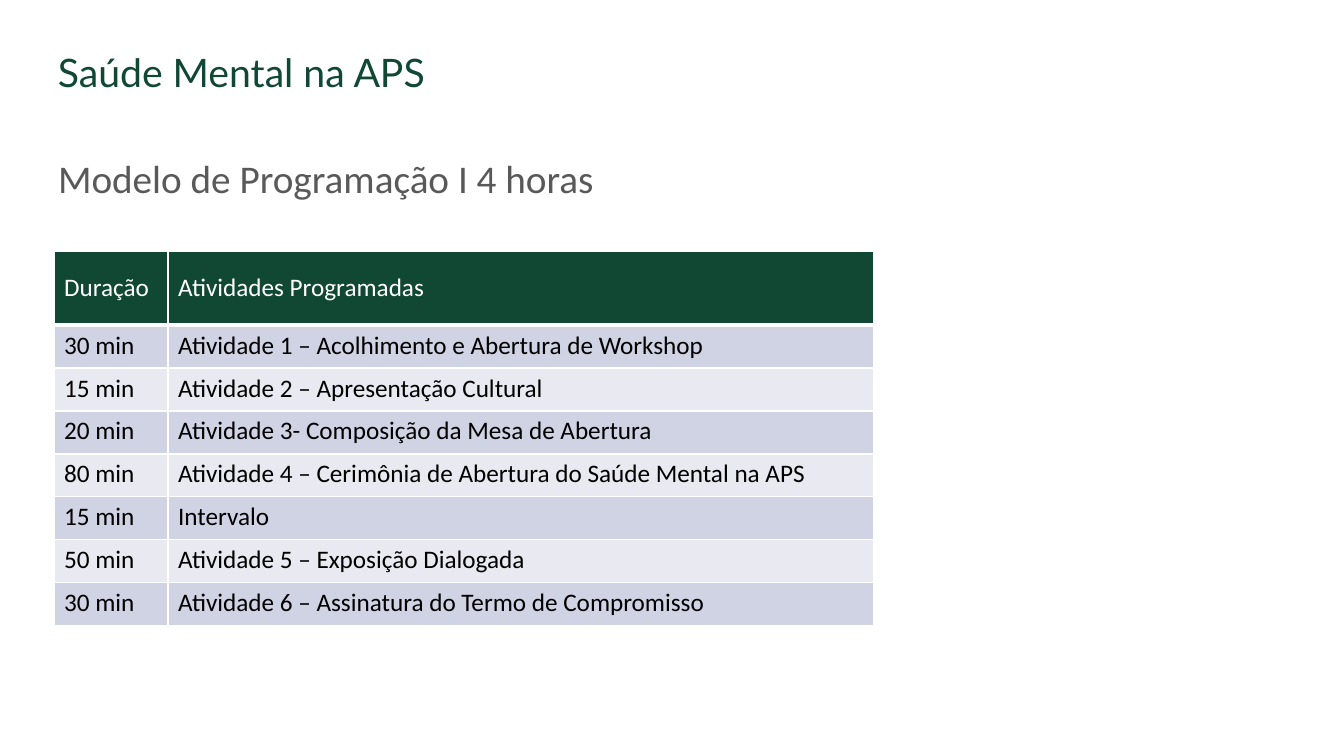
"""Build the four-hour programme slide of Saúde Mental na APS."""
from dataclasses import dataclass

from lxml import etree
from pptx import Presentation
from pptx import util as u
from pptx.dml.color import RGBColor
from pptx.enum import text
from pptx.oxml.ns import qn

EMU_PER_PX = 914400 / 100.8
COLOURS = {
    "green": "114834",
    "grey": "595959",
    "white": "FFFFFF",
    "black": "000000",
    "odd": "D0D3E3",
    "even": "E9EAF1",
}
COLUMN_WIDTHS = (114, 706)
HEADER_HEIGHT, ROW_HEIGHT = 74, 43


@dataclass(frozen=True)
class Style:
    size: int
    font: str
    colour: str


@dataclass(frozen=True)
class Activity:
    duration: str
    name: str


HEADER = Activity("Duração", "Atividades Programadas")
PROGRAMME = [
    Activity("30 min", "Atividade 1 – Acolhimento e Abertura de Workshop"),
    Activity("15 min", "Atividade 2 – Apresentação Cultural"),
    Activity("20 min", "Atividade 3- Composição da Mesa de Abertura"),
    Activity("80 min", "Atividade 4 – Cerimônia de Abertura do Saúde Mental na APS"),
    Activity("15 min", "Intervalo"),
    Activity("50 min", "Atividade 5 – Exposição Dialogada"),
    Activity("30 min", "Atividade 6 – Assinatura do Termo de Compromisso"),
]


def px(length: int) -> u.Emu:
    return u.Emu(round(length * EMU_PER_PX))


def rgb(colour: str) -> RGBColor:
    return RGBColor.from_string(COLOURS[colour])


def write(frame, wording: str, style: Style) -> None:
    paragraph = frame.paragraphs[0]
    paragraph.alignment = text.PP_ALIGN.LEFT
    run = paragraph.add_run()
    run.text = wording
    run.font.size = u.Pt(style.size)
    run.font.name = style.font
    run.font.color.rgb = rgb(style.colour)


def add_borders(cell, top: int, bottom: int) -> None:
    properties = cell._tc.get_or_add_tcPr()
    for side, points in (("L", 1), ("R", 1), ("T", top), ("B", bottom)):
        line = etree.SubElement(properties, qn(f"a:ln{side}"), w=str(u.Pt(points)))
        fill = etree.SubElement(line, qn("a:solidFill"))
        etree.SubElement(fill, qn("a:srgbClr"), val=COLOURS["white"])


def fill_row(table, index: int, activity: Activity) -> None:
    is_header = index == 0
    table.rows[index].height = px(HEADER_HEIGHT if is_header else ROW_HEIGHT)
    background = "green" if is_header else ("even", "odd")[index % 2]
    style = Style(18, "Calibri", "white" if is_header else "black")
    for column, wording in enumerate((activity.duration, activity.name)):
        cell = table.cell(index, column)
        add_borders(cell, top=3 if index == 1 else 1, bottom=3 if is_header else 1)
        cell.fill.solid()
        cell.fill.fore_color.rgb = rgb(background)
        if is_header:
            cell.vertical_anchor = text.MSO_ANCHOR.MIDDLE
        write(cell.text_frame, wording, style)


def add_programme(slide) -> None:
    rows = [HEADER, *PROGRAMME]
    height = HEADER_HEIGHT + ROW_HEIGHT * len(PROGRAMME)
    table = slide.shapes.add_table(
        len(rows), len(COLUMN_WIDTHS),
        px(54), px(251), px(sum(COLUMN_WIDTHS)), px(height),
    ).table
    for column, width in zip(table.columns, COLUMN_WIDTHS):
        column.width = px(width)
    for index, activity in enumerate(rows):
        fill_row(table, index, activity)


def main() -> None:
    deck = Presentation()
    deck.slide_width, deck.slide_height = px(1344), px(756)
    slide = deck.slides.add_slide(deck.slide_layouts[5])

    course = slide.shapes.add_textbox(px(48), px(43), px(714), px(57)).text_frame
    course.word_wrap = True
    write(course, "Saúde Mental na APS", Style(28, "Lato", "green"))

    title = slide.shapes.title
    title.left, title.top, title.width, title.height = px(48), px(108), px(1108), px(146)
    title.text_frame.vertical_anchor = text.MSO_ANCHOR.MIDDLE
    title.text_frame.paragraphs[0].line_spacing = 0.9
    write(title.text_frame, "Modelo de Programação I 4 horas", Style(28, "Calibri", "grey"))

    add_programme(slide)
    deck.save("out.pptx")


if __name__ == "__main__":
    main()
